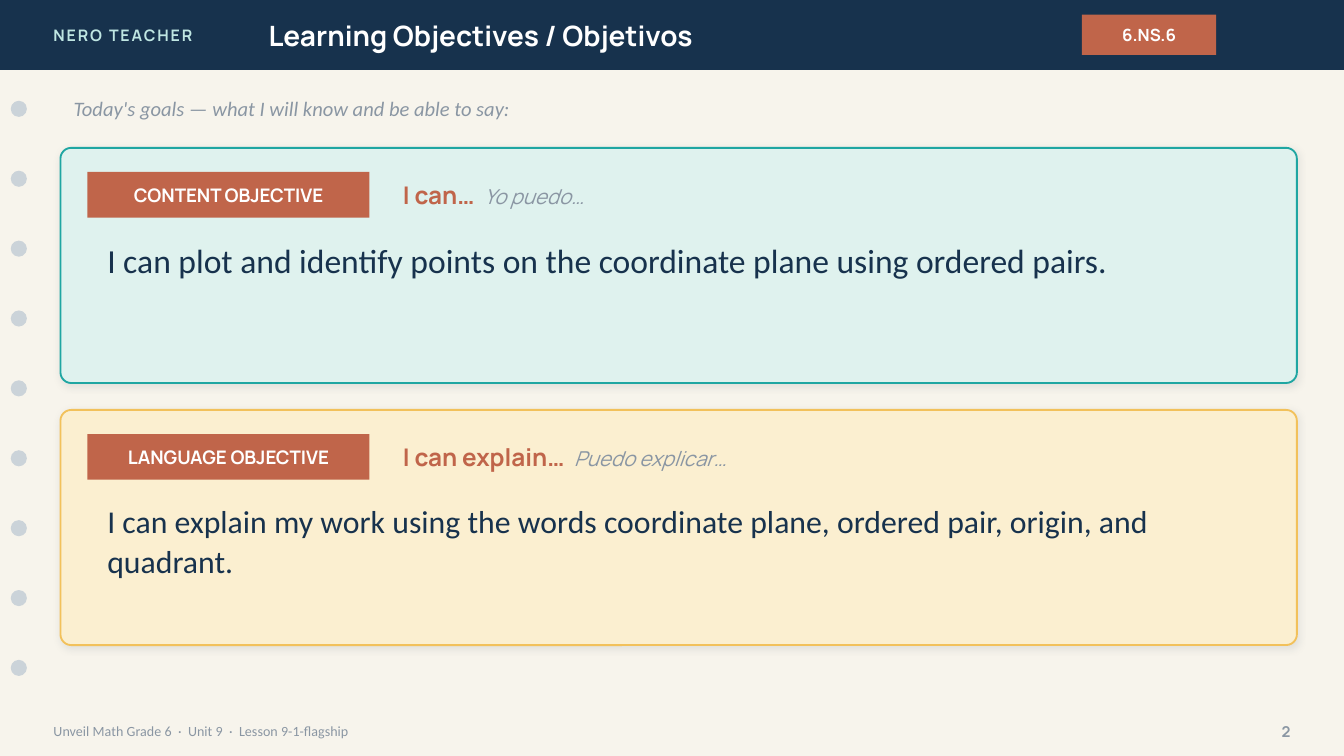
"""Build the learning objectives slide with two objective cards."""
from dataclasses import dataclass

from lxml import etree
from pptx import Presentation
from pptx.dml.color import RGBColor
from pptx.enum.shapes import MSO_SHAPE
from pptx.enum.text import MSO_ANCHOR, PP_ALIGN
from pptx.oxml import parse_xml
from pptx.util import Inches, Pt

RECTANGLE = MSO_SHAPE.RECTANGLE
ROUNDED = MSO_SHAPE.ROUNDED_RECTANGLE
OVAL = MSO_SHAPE.OVAL
TOP, MIDDLE = MSO_ANCHOR.TOP, MSO_ANCHOR.MIDDLE
LEFT, CENTER, RIGHT = PP_ALIGN.LEFT, PP_ALIGN.CENTER, PP_ALIGN.RIGHT


@dataclass(frozen=True)
class Theme:
    heading: str = "Manrope"
    body: str = "Calibri"
    paper: str = "F7F4EC"
    navy: str = "17324D"
    white: str = "FFFFFF"
    mint: str = "BFE6E2"
    clay: str = "C0654A"
    muted: str = "8A96A3"
    hole: str = "CBD3D9"
    shadow: str = "1C2E42"
    title_size: float = 15
    lead_size: float = 13
    note_size: float = 11
    badge_size: float = 10
    code_size: float = 9
    brand_size: float = 8.5
    number_size: float = 8
    footer_size: float = 7.5


THEME = Theme()
CELL = Inches(0.1)
COLUMNS, ROWS = 100, 56.25
BAR_ROWS = 5.2
HOLE_COUNT, HOLE_SIZE, HOLE_STEP = 9, 1.2, 5.2
CARD_TOP, CARD_STEP = 11, 19.5

deck = Presentation()
deck.slide_width, deck.slide_height = round(COLUMNS * CELL), round(ROWS * CELL)
page = deck.slides.add_slide(deck.slide_layouts[6])
page.background.fill.solid()
page.background.fill.fore_color.rgb = RGBColor.from_string(THEME.paper)


def place(column, row, wide, high, kind=None, fill=None):
    """Add a text box, or a filled shape when a kind is given."""
    area = [round(length * CELL) for length in (column, row, wide, high)]
    if kind is None:
        return page.shapes.add_textbox(*area)
    shape = page.shapes.add_shape(kind, *area)
    shape.shadow.inherit = False
    shape.fill.solid()
    shape.fill.fore_color.rgb = RGBColor.from_string(fill)
    shape.line.fill.background()
    return shape


def write(box, text, *, size, color, font=THEME.heading, bold=False, italic=False,
          align=LEFT, anchor=MIDDLE, leading=None, tracking=None):
    """Append a formatted span to the first paragraph of a box."""
    frame = box.text_frame
    frame.word_wrap = True
    frame.vertical_anchor = anchor
    para = frame.paragraphs[0]
    para.alignment = align
    if leading:
        para.line_spacing = leading
    span = para.add_run()
    span.text = text
    span.font.name, span.font.size = font, Pt(size)
    span.font.bold, span.font.italic = bold, italic
    span.font.color.rgb = RGBColor.from_string(color)
    if tracking:
        span.font._element.set("spc", str(round(tracking * 100)))


place(0, 0, COLUMNS, BAR_ROWS, RECTANGLE, THEME.navy)
write(place(3, 0, 24, BAR_ROWS), "NERO TEACHER", size=THEME.brand_size,
      color=THEME.mint, bold=True, tracking=1)
write(place(19, 0, 56, BAR_ROWS), "Learning Objectives / Objetivos",
      size=THEME.title_size, color=THEME.white, bold=True)
write(place(80.5, 1.1, 10, 3, RECTANGLE, THEME.clay), "6.NS.6",
      size=THEME.code_size, color=THEME.white, bold=True, align=CENTER)

for index in range(HOLE_COUNT):
    place(0.8, 7.5 + index * HOLE_STEP, HOLE_SIZE, HOLE_SIZE, OVAL, THEME.hole)

write(place(3, 53, 70, 2.8), "Unveil Math Grade 6  ·  Unit 9  ·  Lesson 9-1-flagship",
      size=THEME.footer_size, color=THEME.muted, font=THEME.body)
write(place(92, 53, 5, 2.8), "2", size=THEME.number_size, color=THEME.muted,
      bold=True, align=RIGHT)
write(place(4.5, 6.6, 92, 3), "Today's goals — what I will know and be able to say:",
      size=THEME.note_size, color=THEME.muted, font=THEME.body, italic=True)

SHADOW_XML = (
    '<a:effectLst xmlns:a="http://schemas.openxmlformats.org/drawingml/2006/main">'
    f'<a:outerShdw blurRad="{Pt(4)}" dist="{Pt(1)}" dir="5400000" algn="bl" '
    f'rotWithShape="0"><a:srgbClr val="{THEME.shadow}"><a:alpha val="10000"/>'
    '</a:srgbClr></a:outerShdw></a:effectLst>'
)
CARDS = [
    ("DFF2EE", "1FA6A2", "CONTENT OBJECTIVE", "I can…  ", "Yo puedo…", 18,
     "I can plot and identify points on the coordinate plane using ordered pairs."),
    ("FBEFD0", "F2C15B", "LANGUAGE OBJECTIVE", "I can explain…  ", "Puedo explicar…", 17,
     "I can explain my work using the words coordinate plane, ordered pair, origin, "
     "and quadrant."),
]
for index, (fill, edge, badge, lead, translation, size, goal) in enumerate(CARDS):
    top = CARD_TOP + index * CARD_STEP
    card = place(4.5, top, 92, 17.5, ROUNDED, fill)
    card.adjustments[0] = 0.046
    card.line.color.rgb = RGBColor.from_string(edge)
    card.line.width = Pt(1)
    properties = card._element.spPr
    etree.strip_elements(properties, "{*}effectLst")
    properties.append(parse_xml(SHADOW_XML))

    write(place(6.5, top + 1.8, 21, 3.4, RECTANGLE, THEME.clay), badge,
          size=THEME.badge_size, color=THEME.white, bold=True, align=CENTER)
    stem = place(29, top + 1.8, 66, 3.4)
    write(stem, lead, size=THEME.lead_size, color=THEME.clay, bold=True)
    write(stem, translation, size=THEME.note_size, color=THEME.muted, italic=True)
    write(place(7, top + 6.2, 87, 10), goal, size=size, color=THEME.navy,
          font=THEME.body, anchor=TOP, leading=1.05)

deck.save("out.pptx")
